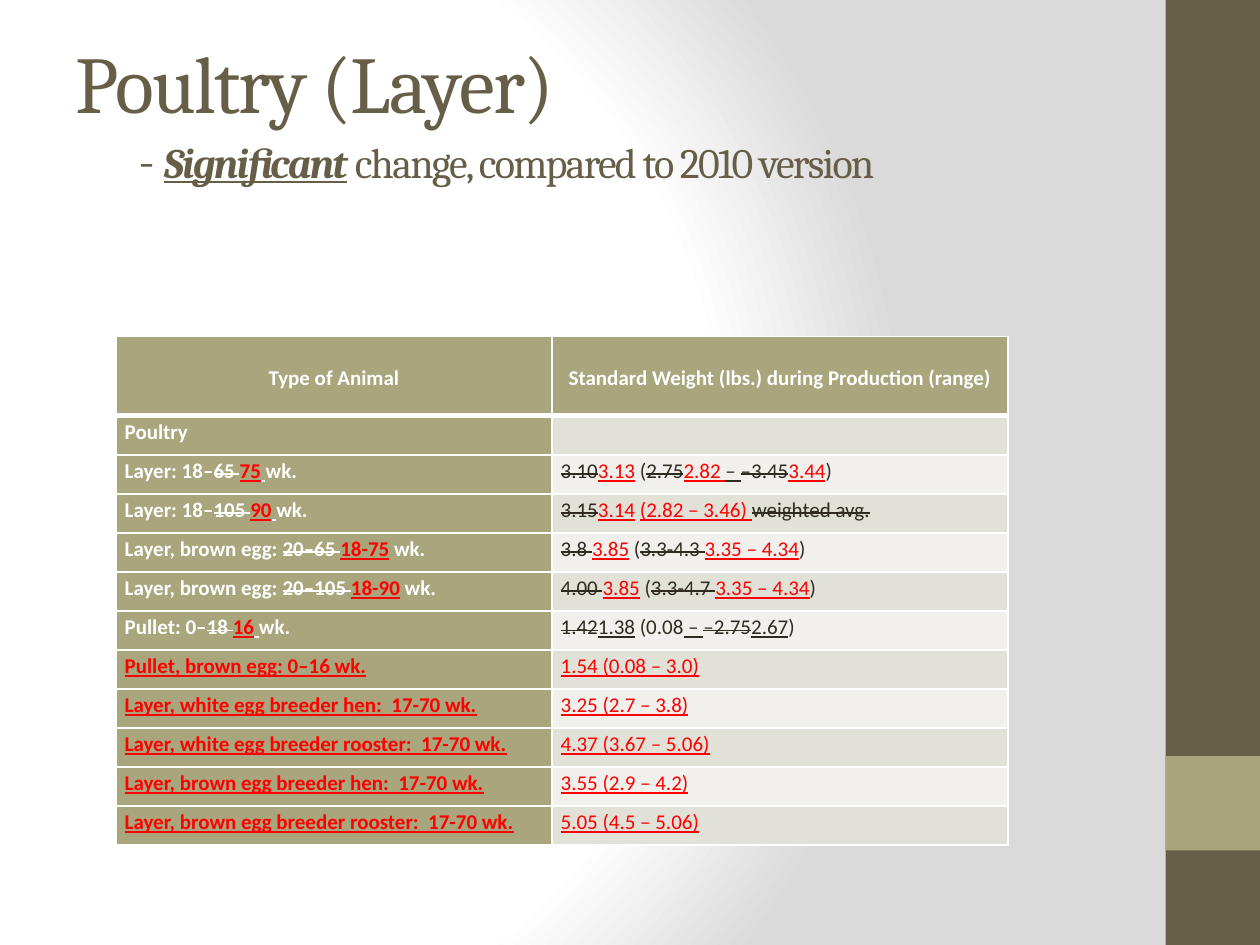
"""Build the poultry layer standard weight slide."""
import pptx
import pptx.dml.color
import pptx.enum.text
import pptx.oxml
import pptx.oxml.ns
import pptx.util
from pptx.util import Inches, Pt

RGB = pptx.dml.color.RGBColor
WHITE = RGB(0xFF, 0xFF, 0xFF)
BROWN = RGB(0x67, 0x5E, 0x47)
OLIVE = RGB(0xA9, 0xA5, 0x7C)
INK = RGB(0x2F, 0x2B, 0x20)
RED = RGB(0xFF, 0x00, 0x00)
BANDS = (RGB(0xF1, 0xF0, 0xEC), RGB(0xE2, 0xE1, 0xD7))

HEADERS = ("Type of Animal", "Standard Weight (lbs.) during Production (range)")
# Marks after "|": ~ struck out, + newly added, _ underlined
ROWS = (
    ("Poultry", ""),
    ("Layer: 18–|~65 |+75|_ |wk.",
     "|~3.10|+3.13| (|~2.75|+2.82 |_– |~–3.45|+3.44|)"),
    ("Layer: 18–|~105 |+90|_ |wk.",
     "|~3.15|+3.14| |+(2.82 – 3.46) |~weighted avg."),
    ("Layer, brown egg: |~20–65 |+18-75| wk.",
     "|~3.8 |+3.85| (|~3.3-4.3 |+3.35 – 4.34|)"),
    ("Layer, brown egg: |~20–105 |+18-90| wk.",
     "|~4.00 |+3.85| (|~3.3-4.7 |+3.35 – 4.34|)"),
    ("Pullet: 0–|~18 |+16|_ |wk.",
     "|~1.42|_1.38| (0.08|_ – |~–2.75|_2.67|)"),
    ("+Pullet, brown egg: 0–16 wk.", "+1.54 (0.08 – 3.0)"),
    ("+Layer, white egg breeder hen:  17-70 wk.", "+3.25 (2.7 – 3.8)"),
    ("+Layer, white egg breeder rooster:  17-70 wk.", "+4.37 (3.67 – 5.06)"),
    ("+Layer, brown egg breeder hen:  17-70 wk.", "+3.55 (2.9 – 4.2)"),
    ("+Layer, brown egg breeder rooster:  17-70 wk.", "+5.05 (4.5 – 5.06)"),
)


class Deck:
    """Holds the fonts and the current slide."""
    heading, body = "Cambria", "Calibri"

    def __init__(self):
        self.prs = pptx.Presentation()
        self.prs.slide_width, self.prs.slide_height = Inches(10), Inches(7.5)
        self.s = self.prs.slides.add_slide(self.prs.slide_layouts[5])

    def background(self, stops):
        gs = "".join(f'<a:gs pos="{pos}000"><a:srgbClr val="{color}"/></a:gs>'
                     for pos, color in stops)
        bg = pptx.oxml.parse_xml(
            f'<p:bg {pptx.oxml.ns.nsdecls("p", "a")}><p:bgPr>'
            f'<a:gradFill rotWithShape="1"><a:gsLst>{gs}</a:gsLst><a:path path="circle">'
            '<a:fillToRect l="20000" t="50000" r="100000" b="50000"/></a:path>'
            '</a:gradFill><a:effectLst/></p:bgPr></p:bg>')
        self.s.element.cSld.insert(0, bg)

    def rect(self, x, y, w, h, color):
        sp = self.s.shapes.add_shape(1, Inches(x), Inches(y), Inches(w), Inches(h))
        sp.shadow.inherit = False
        sp.fill.solid()
        sp.fill.fore_color.rgb = color
        sp.line.fill.background()

    def title(self, x, y, w, h, first, second):
        sp = self.s.shapes.title
        sp.left, sp.top, sp.width, sp.height = map(Inches, (x, y, w, h))
        tf = sp.text_frame
        tf.word_wrap = True
        tf.auto_size = pptx.enum.text.MSO_AUTO_SIZE.NONE
        tf.vertical_anchor = pptx.enum.text.MSO_ANCHOR.MIDDLE
        p = tf.paragraphs[0]
        p.alignment = pptx.enum.text.PP_ALIGN.LEFT
        p.font.name, p.font.color.rgb = self.heading, BROWN
        self.title_run(p, first, 46)
        p.add_line_break()
        for text, size, strong in second:
            r = self.title_run(p, text, size)
            if strong:
                r.font.bold = r.font.italic = r.font.underline = True

    def title_run(self, p, text, size):
        r = p.add_run()
        r.text = text
        r.font.size = Pt(size)
        r.font.name, r.font.color.rgb = self.heading, BROWN
        r.font._element.set("spc", "-100")
        return r

    def cell(self, cell, text, fill, color, bold, center=False, top=1, bottom=1):
        cell.margin_left = cell.margin_right = Inches(0.07)
        cell.margin_top = cell.margin_bottom = 0
        cell.fill.solid()
        cell.fill.fore_color.rgb = fill
        p = cell.text_frame.paragraphs[0]
        p.line_spacing = 1.15
        p.font.size = Pt(12)
        if center:
            cell.vertical_anchor = pptx.enum.text.MSO_ANCHOR.MIDDLE
            p.alignment = pptx.enum.text.PP_ALIGN.CENTER
        for part in filter(None, text.split("|")):
            mark = part[0] if part[0] in "~+_" else ""
            r = p.add_run()
            r.text = part[len(mark):]
            r.font.name, r.font.size, r.font.bold = self.body, Pt(12), bold
            r.font.color.rgb = RED if mark == "+" else color
            if mark == "~":
                r.font._element.set("strike", "sngStrike")
            elif mark:
                r.font.underline = True
        tcPr = cell._tc.get_or_add_tcPr()
        for i, (side, width) in enumerate(zip("LRTB", (1, 1, top, bottom))):
            tcPr.insert(i, pptx.oxml.parse_xml(
                f'<a:ln{side} {pptx.oxml.ns.nsdecls("a")} w="{Pt(width)}">'
                f'<a:solidFill><a:srgbClr val="{WHITE}"/></a:solidFill></a:ln{side}>'))

    def table(self, x, y, widths, head_height, row_height, headers, rows):
        height = head_height + row_height * len(rows)
        table = self.s.shapes.add_table(
            len(rows) + 1, len(widths), Inches(x), Inches(y),
            Inches(sum(widths)), Inches(height)).table
        for column, width in zip(table.columns, widths):
            column.width = Inches(width)
        for row in table.rows:
            row.height = Inches(row_height)
        table.rows[0].height = Inches(head_height)
        for j, text in enumerate(headers):
            self.cell(table.cell(0, j), text, OLIVE, WHITE, True, center=True, bottom=3)
        for i, (animal, weight) in enumerate(rows, 1):
            top = 3 if i == 1 else 1
            self.cell(table.cell(i, 0), animal, OLIVE, WHITE, True, top=top)
            self.cell(table.cell(i, 1), weight, BANDS[i % 2], INK, False, top=top)


def main():
    deck = Deck()
    deck.background(((0, WHITE), (75, WHITE), (100, "DADADA")))
    deck.rect(9.25, 0, 0.75, 7.5, BROWN)
    deck.rect(9.25, 6, 0.75, 0.75, OLIVE)
    deck.title(0.5, 0.25, 8.33, 1.25, "Poultry (Layer)",
               (("\t- ", 28, False), ("Significant", 24, True),
                (" change, compared to 2010 version", 24, False)))
    deck.table(0.92, 2.67, (3.46, 3.62), 0.63, 0.31, HEADERS, ROWS)
    deck.prs.save("out.pptx")


if __name__ == "__main__":
    main()
